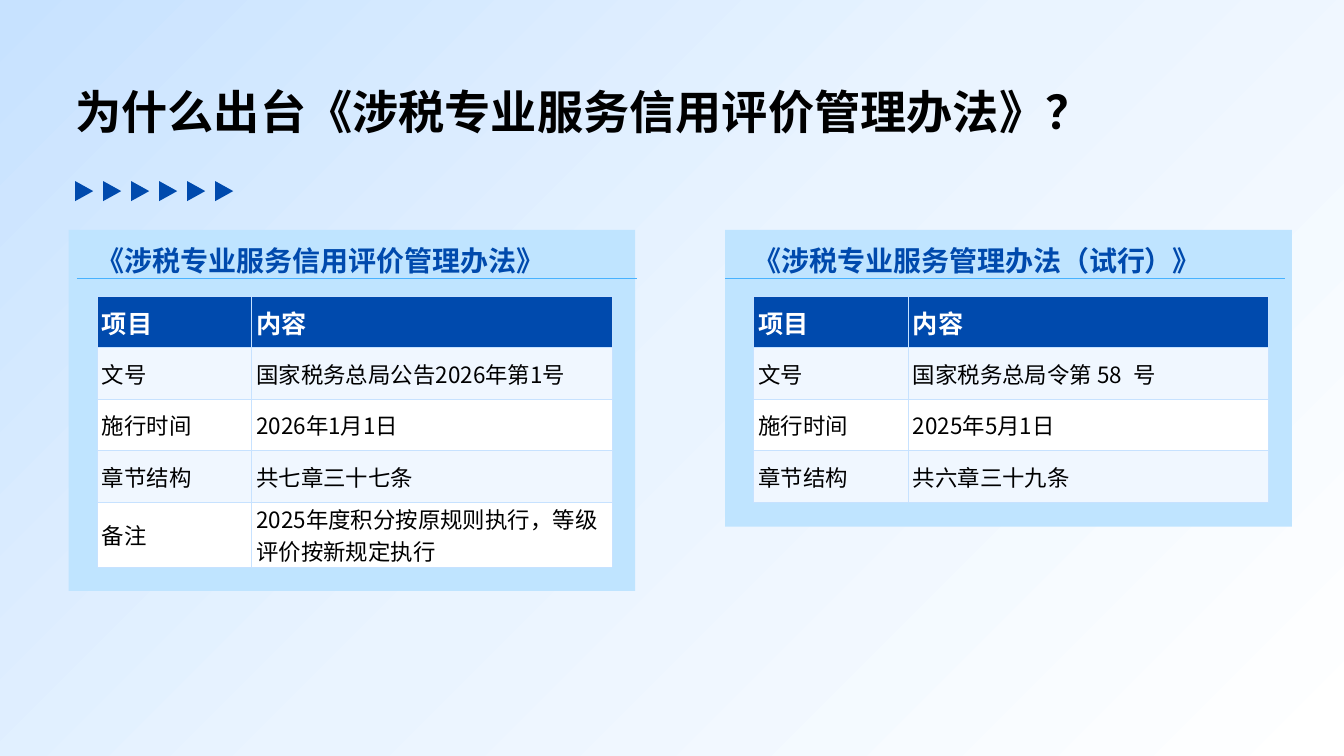
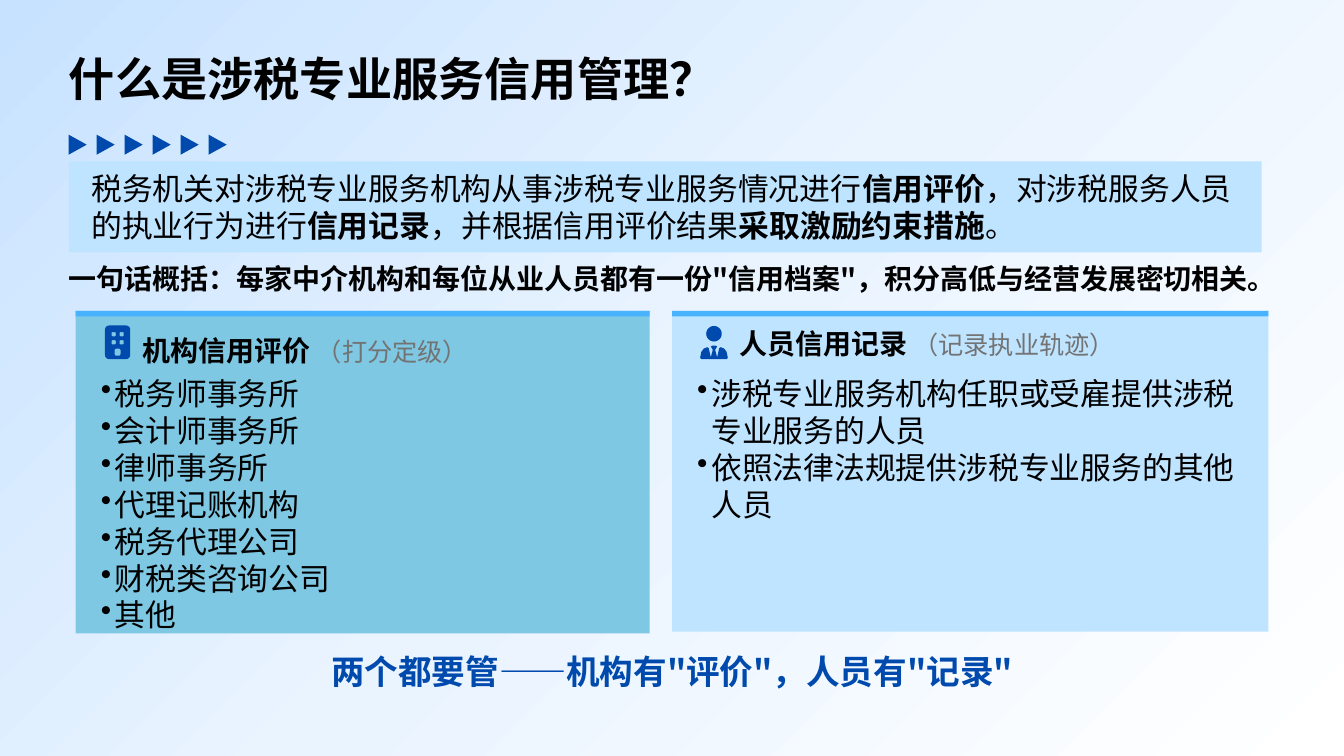
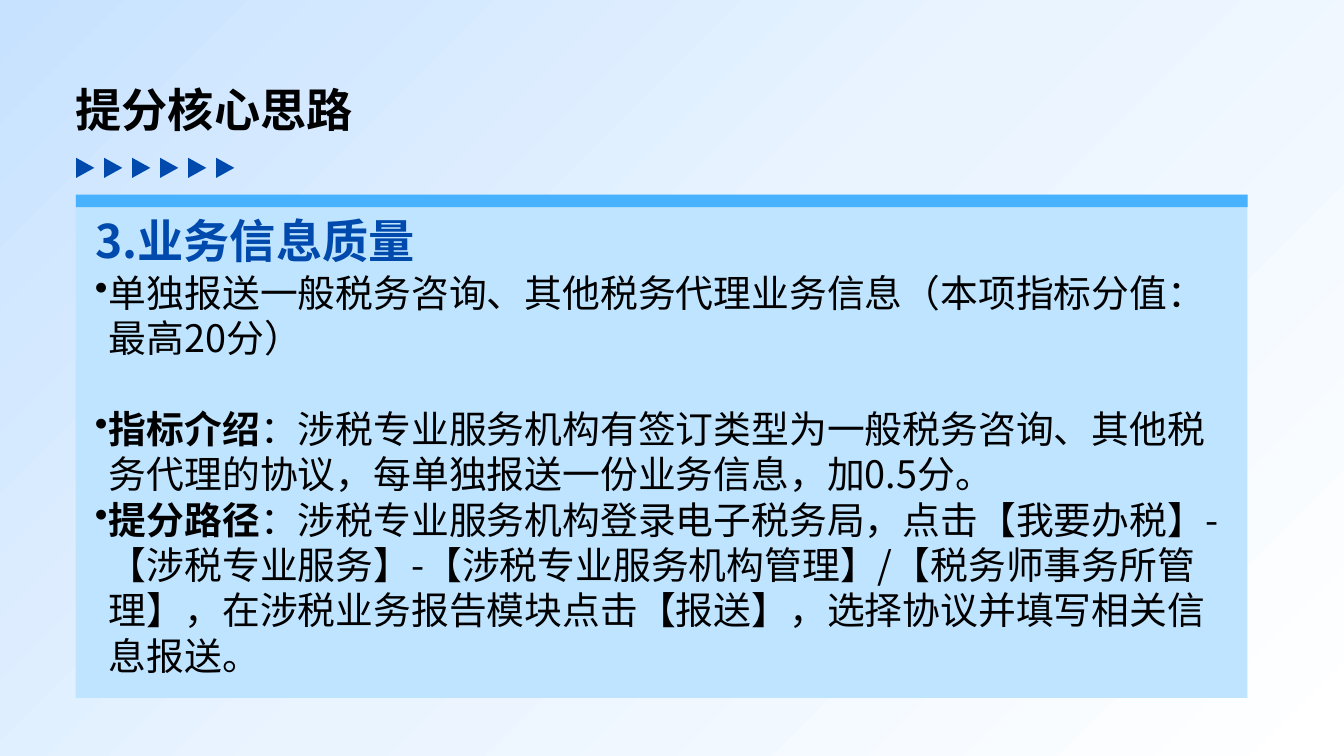
from copy import deepcopy
from math import cos, pi, sin

from lxml import etree
from pptx import Presentation
from pptx.dml.color import RGBColor
from pptx.enum.shapes import MSO_CONNECTOR, MSO_SHAPE
from pptx.enum.text import MSO_ANCHOR, MSO_AUTO_SIZE, PP_ALIGN
from pptx.oxml.ns import qn
from pptx.util import Pt

RECT, ARROW = MSO_SHAPE.RECTANGLE, MSO_SHAPE.ISOSCELES_TRIANGLE
LINE = MSO_CONNECTOR.STRAIGHT
TOP, MID = MSO_ANCHOR.TOP, MSO_ANCHOR.MIDDLE
LEFT, CENTER = PP_ALIGN.LEFT, PP_ALIGN.CENTER
FIXED = MSO_AUTO_SIZE.NONE
FONT = "Noto Sans CJK SC"
NAVY, SKY, PALE, TEAL = "004AAD", "48B2FF", "BFE4FF", "7EC8E3"
BLACK, WHITE, GREY = "000000", "FFFFFF", "737373"
EDGE, STRIPE = "C7E2FF", "F0F7FF"
BACK = [(0, "C7E2FF"), (0.5, "EAF4FF"), (1, "FFFFFF")]
EN_SPACE = chr(8194)


def color(code):
    """Turn a hex string into a colour."""
    return RGBColor.from_string(code)


def points(*sizes):
    """Turn numbers into lengths in points."""
    return [Pt(size) for size in sizes]


def paint(item, code):
    """Give a shape a plain fill with no line and no shadow."""
    item.fill.solid()
    item.fill.fore_color.rgb = color(code)
    item.line.fill.background()
    item.shadow.inherit = False
    return item


def block(slide, box, code, kind=RECT):
    """Draw one filled preset shape."""
    return paint(slide.shapes.add_shape(kind, *points(*box)), code)


def add_run(para, words, size, code=BLACK, bold=False):
    """Add one formatted run to a paragraph."""
    run = para.add_run()
    run.text = words
    font = run.font
    font.size, font.bold, font.name = Pt(size), bold, FONT
    font.color.rgb = color(code)
    east = etree.SubElement(run._r.get_or_add_rPr(), qn("a:ea"))
    east.set("typeface", FONT)


def add_dot(para):
    """Give a paragraph a hanging round bullet."""
    props = para._p.get_or_add_pPr()
    props.set("marL", str(Pt(20)))
    props.set("indent", str(Pt(-20)))
    etree.SubElement(props, qn("a:buChar")).set("char", "•")


def fill_text(frame, paras, anchor=TOP, wrap=False, align=LEFT,
              dots=False, gaps=()):
    """Write paragraphs, each a list of runs, into a text frame."""
    frame.auto_size = FIXED
    frame.word_wrap, frame.vertical_anchor = wrap, anchor
    frame.margin_left = frame.margin_right = 0
    frame.margin_top = frame.margin_bottom = 0
    gaps = dict(gaps)
    for i, runs in enumerate(paras):
        para = frame.add_paragraph() if i else frame.paragraphs[0]
        if dots:
            add_dot(para)
        para.alignment = align
        if i in gaps:
            para.space_before = Pt(gaps[i])
        for run in runs:
            add_run(para, *run)


def label(slide, box, paras, **style):
    """Add a text box."""
    frame = slide.shapes.add_textbox(*points(*box)).text_frame
    fill_text(frame, paras, **style)


def set_back(master):
    """Give every slide the diagonal gradient."""
    fill = master.background.fill
    fill.gradient()
    fill.gradient_angle = 315
    stops = master.element.find(".//" + qn("a:gsLst"))
    stops.append(deepcopy(stops[-1]))
    for stop, (place, code) in zip(fill.gradient_stops, BACK):
        stop.position = place
        stop.color.rgb = color(code)


def new_slide(deck, words, box, row):
    """Start a slide with its title and row of arrows."""
    slide = deck.slides.add_slide(deck.slide_layouts[5])
    title = slide.shapes.title
    title.left, title.top, title.width, title.height = points(*box)
    fill_text(title.text_frame, [[(words, 66, BLACK, True)]])
    x, y = row
    for i in range(6):
        block(slide, (x + 40 * i, y, 28.8, 26), NAVY, ARROW).rotation = 90
    return slide


def style_cell(cell, words, size, ink, bold, back):
    """Format one table cell, with its borders and fill."""
    props = cell._tc.get_or_add_tcPr()
    for side in ("a:lnL", "a:lnR", "a:lnT", "a:lnB"):
        edge = etree.SubElement(props, qn(side), w=str(Pt(1)))
        solid = etree.SubElement(edge, qn("a:solidFill"))
        etree.SubElement(solid, qn("a:srgbClr"), val=EDGE)
    cell.fill.solid()
    cell.fill.fore_color.rgb = color(back)
    cell.margin_left = cell.margin_right = Pt(7.2)
    cell.margin_top = cell.margin_bottom = 0
    cell.vertical_anchor = MID
    add_run(cell.text_frame.paragraphs[0], words, size, ink, bold)


def add_grid(slide, box, rows, highs):
    """Add the two-column table of facts."""
    x, y, wide = box
    frame = slide.shapes.add_table(
        len(rows), 2, *points(x, y, wide, sum(highs)))
    table = frame.table
    for column, size in zip(table.columns, (220.7, wide - 220.7)):
        column.width = Pt(size)
    for i, (row, high) in enumerate(zip(rows, highs)):
        table.rows[i].height = Pt(high)
        style = (32, BLACK, False, STRIPE if i % 2 else WHITE)
        if i == 0:
            style = (36, WHITE, True, NAVY)
        for j, words in enumerate(row):
            style_cell(table.cell(i, j), words, *style)


def rule_card(slide, box, head, rows, highs, lead):
    """Draw a panel with an underlined heading and a table."""
    x, y, wide, _ = box
    block(slide, box, PALE)
    label(slide, (x + 40.3, y + 19.5, 400, 50), [[(head, 40, NAVY, True)]])
    ends = points(x + lead, y + 69.8, x + lead + 800, y + 69.8)
    line = slide.shapes.add_connector(LINE, *ends)
    line.line.color.rgb, line.line.width = color(SKY), Pt(2)
    etree.SubElement(line._element.spPr, qn("a:effectLst"))
    add_grid(slide, (x + 40.3, y + 95, wide - 73.6), rows, highs)


def ring(x, y, wide, high, r):
    """List the points of a rounded rectangle."""
    mids = [(x + wide - r, y + high - r), (x + r, y + high - r),
            (x + r, y + r), (x + wide - r, y + r)]
    return [(cx + r * cos(a), cy + r * sin(a))
            for i, (cx, cy) in enumerate(mids)
            for a in [(i + k / 6) * pi / 2 for k in range(7)]]


def house():
    """List the outlines of the office block icon."""
    panes = [ring(x, y, 6, 6, 1.2) for y in (9.4, 21) for x in (9.4, 20.8)]
    return [ring(0, 0, 36, 48, 6), ring(13.7, 33, 8.6, 10.2, 2.5)] + panes


def person():
    """List the outlines of the person icon."""
    half = [(2.5, 28.8), (4.5, 30.2), (1.7, 34.6), (4.5, 45.4),
            (7.5, 32.4), (9.7, 31), (14.5, 33), (18, 37.5),
            (19.7, 45.4), (19, 47.5), (17, 48.2)]
    body = [(21.5 + x, y) for x, y in half]
    body += [(21.5 - x, y) for x, y in reversed(half)]
    return [ring(10.4, 0.7, 22.2, 22.2, 11.1), body]


def icon(slide, x, y, loops):
    """Draw an icon from closed outlines."""
    paths = [[points(x + a, y + b) for a, b in loop] for loop in loops]
    form = slide.shapes.build_freeform(*paths[0][0])
    for i, path in enumerate(paths):
        if i:
            form.move_to(*path[0])
        form.add_line_segments(path[1:], close=True)
    paint(form.convert_to_shape(), NAVY)


def list_card(slide, box, back, head, note, items, mark, shift, tall):
    """Draw a panel with a top band, icon, heading and bullets."""
    x, y, wide, _ = box
    block(slide, box, back)
    block(slide, (x, y, wide, 8), SKY)
    icon(slide, x + shift, y + 21, mark)
    label(slide, (x + 96, y + 21, 500, tall),
          [[(head + " ", 40, BLACK, True), (note, 36, GREY)]], anchor=MID)
    label(slide, (x + 36, y + 91, wide - 64, 300),
          [[(item, 44)] for item in items], wrap=True, dots=True)


def why_slide(deck):
    """Build the slide that compares the two rules."""
    slide = new_slide(deck, "为什么出台《涉税专业服务信用评价管理办法》？",
                      (107.5, 119.5, 1485, 65), (105.8, 260))
    rows = [("项目", "内容"), ("文号", "国家税务总局公告2026年第1号"),
            ("施行时间", "2026年1月1日"), ("章节结构", "共七章三十七条"),
            ("备注", "2025年度积分按原规则执行，等级评价按新规定执行")]
    highs = [73.5] * 4
    rule_card(slide, (98, 328.3, 809.5, 516), "《涉税专业服务信用评价管理办法》",
              rows, highs + [91.4], 12)
    rows = [("项目", "内容"), ("文号", f"国家税务总局令第 58{EN_SPACE}号"),
            ("施行时间", "2025年5月1日"), ("章节结构", "共六章三十九条")]
    rule_card(slide, (1036, 328.3, 809.5, 424), "《涉税专业服务管理办法（试行）》",
              rows, highs, 0)


def what_slide(deck):
    """Build the slide that explains credit management."""
    slide = new_slide(deck, "什么是涉税专业服务信用管理？",
                      (98.5, 72, 1000, 92), (96.5, 193.7))
    block(slide, (98.5, 230.5, 1704, 130), PALE)
    parts = ["税务机关对涉税专业服务机构从事涉税专业服务情况进行", "信用评价",
             "，对涉税服务人员的执业行为进行", "信用记录",
             "，并根据信用评价结果", "采取激励约束措施", "。"]
    label(slide, (130.5, 240.5, 1640, 110),
          [[(part, 44, BLACK, i % 2 == 1) for i, part in enumerate(parts)]],
          anchor=MID, wrap=True)
    label(slide, (98.5, 382.5, 1704, 30),
          [[('一句话概括：每家中介机构和每位从业人员都有一份"信用档案"，'
             '积分高低与经营发展密切相关。', 40, BLACK, True)]], anchor=MID)
    list_card(slide, (108, 444, 820, 461), TEAL, "机构信用评价", "（打分定级）",
              ["税务师事务所", "会计师事务所", "律师事务所", "代理记账机构",
               "税务代理公司", "财税类咨询公司", "其他"], house(), 42, 70)
    list_card(slide, (960, 444, 852, 458.5), PALE, "人员信用记录", "（记录执业轨迹）",
              ["涉税专业服务机构任职或受雇提供涉税专业服务的人员",
               "依照法律法规提供涉税专业服务的其他人员"], person(), 38.5, 50)
    label(slide, (108, 917.5, 1704, 82),
          [[('两个都要管——机构有"评价"，人员有"记录"', 48, NAVY, True)]],
          anchor=MID, align=CENTER)


def score_slide(deck):
    """Build the slide on raising the score."""
    slide = new_slide(deck, "提分核心思路", (108, 116.5, 500, 65), (107.3, 226.8))
    x, y, wide = 108, 278, 1674
    block(slide, (x, y, wide, 719), PALE)
    block(slide, (x + 0.5, y, wide, 18), SKY)
    label(slide, (x + 28, y + 24.5, 574.5, 82),
          [[("3.业务信息质量", 66, NAVY, True)]], anchor=MID)
    paras = [
        [("单独报送一般税务咨询、其他税务代理业务信息（本项指标分值：最高20分）", 54)],
        [("指标介绍", 54, BLACK, True),
         ("：涉税专业服务机构有签订类型为一般税务咨询、其他税务代理的协议，"
          "每单独报送一份业务信息，加0.5分。", 54)],
        [("提分路径", 54, BLACK, True),
         ("：涉税专业服务机构登录电子税务局，点击【我要办税】-【涉税专业服务】-"
          "【涉税专业服务机构管理】/【税务师事务所管理】，在涉税业务报告模块点击"
          "【报送】，选择协议并填写相关信息报送。", 54)]]
    label(slide, (x + 27.5, y + 107, wide - 61, 460), paras,
          wrap=True, dots=True, gaps={1: 65})


def main():
    """Build and save the deck."""
    deck = Presentation()
    deck.slide_width, deck.slide_height = points(1920, 1080)
    set_back(deck.slide_master)
    why_slide(deck)
    what_slide(deck)
    score_slide(deck)
    deck.save("out.pptx")


if __name__ == "__main__":
    main()
